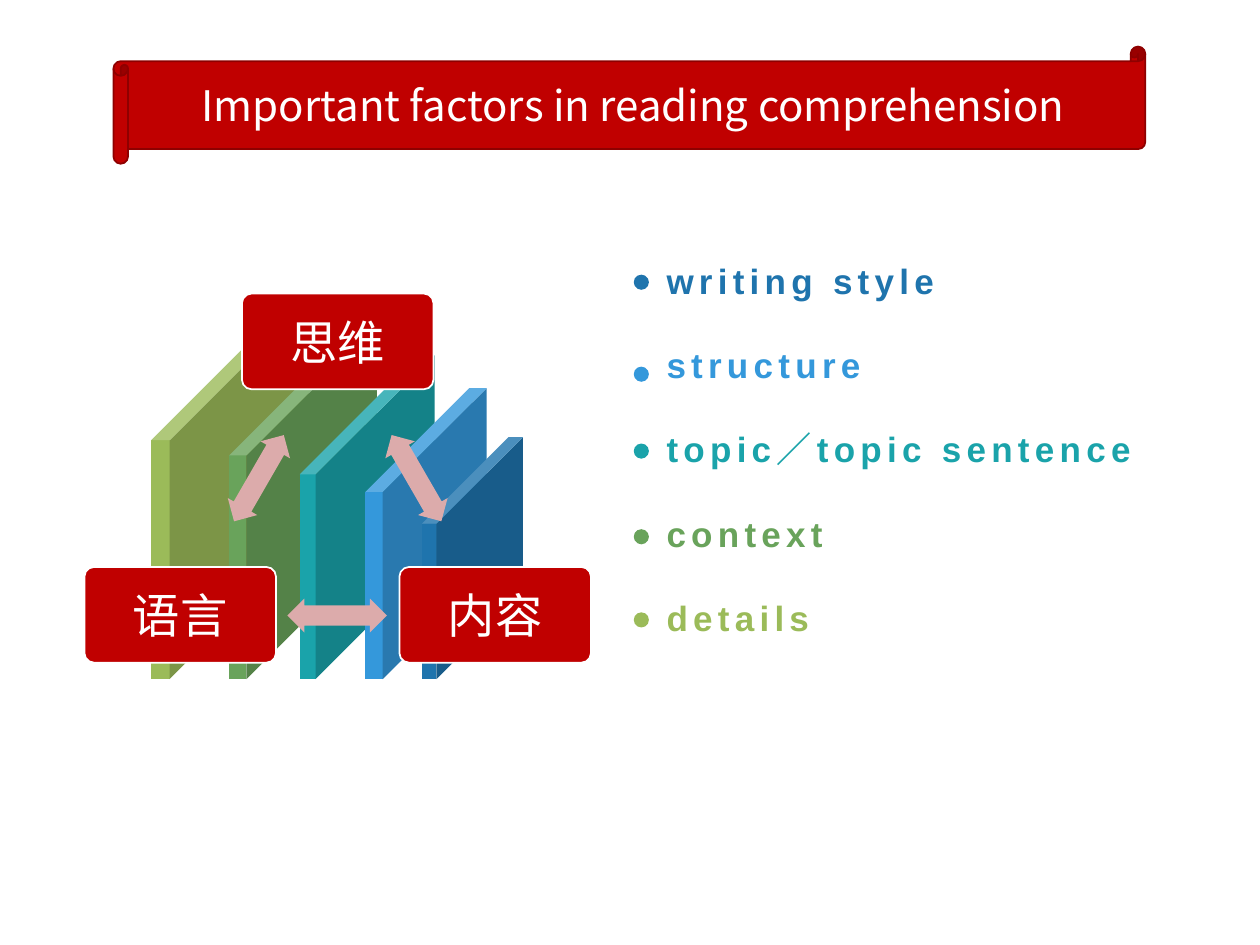
from lxml import etree
from pptx import Presentation
from pptx import util as u
from pptx.dml.color import RGBColor
from pptx.enum import shapes, text
from pptx.oxml.ns import qn

RED, WHITE, PINK = "C00000", "FFFFFF", "DCABAB"
BLUE, SKY, TEAL, GREEN, LIME = "1F74AD", "3498DB", "1AA3AA", "69A35B", "9BBB59"
CJK_FONT = "Noto Sans CJK SC"
KIND = shapes.MSO_SHAPE

FACTORS = [
    ("writing style", BLUE, 2.18),
    ("structure", SKY, 2.91),
    ("topic／topic sentence", TEAL, 3.52),
    ("context", GREEN, 4.2),
    ("details", LIME, 4.86),
]
SLABS = [
    (1.2, 3, 0.883, LIME),
    (1.82, 2.81, 0.883, GREEN),
    (2.38, 2.57, 0.883, TEAL),
    (2.9, 2.31, 0.857, SKY),
    (3.35, 1.92, 0.857, BLUE),
]
SLAB_BASE, SLAB_RATIO = 5.39, 2.4
CORNERS = [("思维", 1.92, 2.33), ("内容", 3.17, 4.5), ("语言", 0.67, 4.5)]
LINKS = [(2.91, 3.66, 60), (2.28, 4.75, 180), (1.66, 3.66, 300)]


def color(hex_code):
    """Turn a hex string into a colour."""
    return RGBColor.from_string(hex_code)


def add_figure(slide, kind, box, fill, line=None, adjust=()):
    """Add a filled preset shape, outlined only when a line colour is given."""
    figure = slide.shapes.add_shape(kind, *map(u.Inches, box))
    figure.shadow.inherit = False
    figure.fill.solid()
    figure.fill.fore_color.rgb = color(fill)
    if line:
        figure.line.color.rgb = color(line)
        figure.line.width = u.Pt(1)
    else:
        figure.line.fill.background()
    for index, value in enumerate(adjust):
        figure.adjustments[index] = value
    return figure


def write(holder, wording, *, size, font="Arial", hue=WHITE, bold=False, spacing=0,
          align=text.PP_ALIGN.CENTER, anchor=text.MSO_ANCHOR.MIDDLE,
          leading=None, insets=(0.1, 0.05, 0.1, 0.05)):
    """Write one formatted paragraph into a shape or text box."""
    frame = holder.text_frame
    frame.word_wrap = True
    frame.vertical_anchor = anchor
    (frame.margin_left, frame.margin_top,
     frame.margin_right, frame.margin_bottom) = map(u.Inches, insets)
    paragraph = frame.paragraphs[0]
    paragraph.alignment = align
    paragraph.line_spacing = leading
    run = paragraph.add_run()
    run.text = wording
    run.font.size = u.Pt(size)
    run.font.name = font
    run.font.bold = bold
    run.font.color.rgb = color(hue)
    properties = run.font._element
    etree.SubElement(properties, qn("a:ea")).set("typeface", CJK_FONT)
    if spacing:
        properties.set("spc", str(spacing * 100))


def add_title(slide):
    """Add the scroll that carries the slide title."""
    scroll = add_figure(slide, KIND.HORIZONTAL_SCROLL, (0.9, 0.37, 8.19, 0.93),
                        RED, line="8E0000")
    write(scroll, "Important factors in reading comprehension", size=24, font=CJK_FONT)


def add_factor(slide, row, wording, hue, dot_top):
    """Add one dotted entry of the factor list."""
    add_figure(slide, KIND.OVAL, (5.03, dot_top, 0.12, 0.12), hue)
    label = slide.shapes.add_textbox(
        *map(u.Inches, (5.22, 2.09 + 0.67 * row, 4.04, 0.3)))
    write(label, wording, size=20, hue=hue, bold=True, spacing=3,
          align=text.PP_ALIGN.LEFT, anchor=text.MSO_ANCHOR.BOTTOM,
          leading=1.3, insets=(0.07, 0.04, 0.07, 0))


def add_slab(slide, left, height, depth, hue):
    """Add one upright slab standing on the common base line."""
    box = (left, SLAB_BASE - height, height / SLAB_RATIO, height)
    add_figure(slide, KIND.CUBE, box, hue, adjust=[depth])


def add_corner(slide, wording, left, top):
    """Add one labelled corner of the triangle."""
    card = add_figure(slide, KIND.ROUNDED_RECTANGLE, (left, top, 1.52, 0.76),
                      RED, line=WHITE, adjust=[0.1])
    write(card, wording, size=27, insets=(0.11,) * 4)


def add_link(slide, left, top, angle):
    """Add one double arrow between two corners."""
    arrow = add_figure(slide, KIND.LEFT_RIGHT_ARROW, (left, top, 0.79, 0.27),
                       PINK, adjust=[0.6, 0.5])
    arrow.rotation = angle


def main():
    """Build the slide and save it."""
    deck = Presentation()
    deck.slide_width, deck.slide_height = u.Inches(10), u.Inches(7.5)
    slide = deck.slides.add_slide(deck.slide_layouts[6])
    add_title(slide)
    for row, factor in enumerate(FACTORS):
        add_factor(slide, row, *factor)
    for slab in SLABS:
        add_slab(slide, *slab)
    for corner, link in zip(CORNERS, LINKS):
        add_corner(slide, *corner)
        add_link(slide, *link)
    deck.save("out.pptx")


if __name__ == "__main__":
    main()
